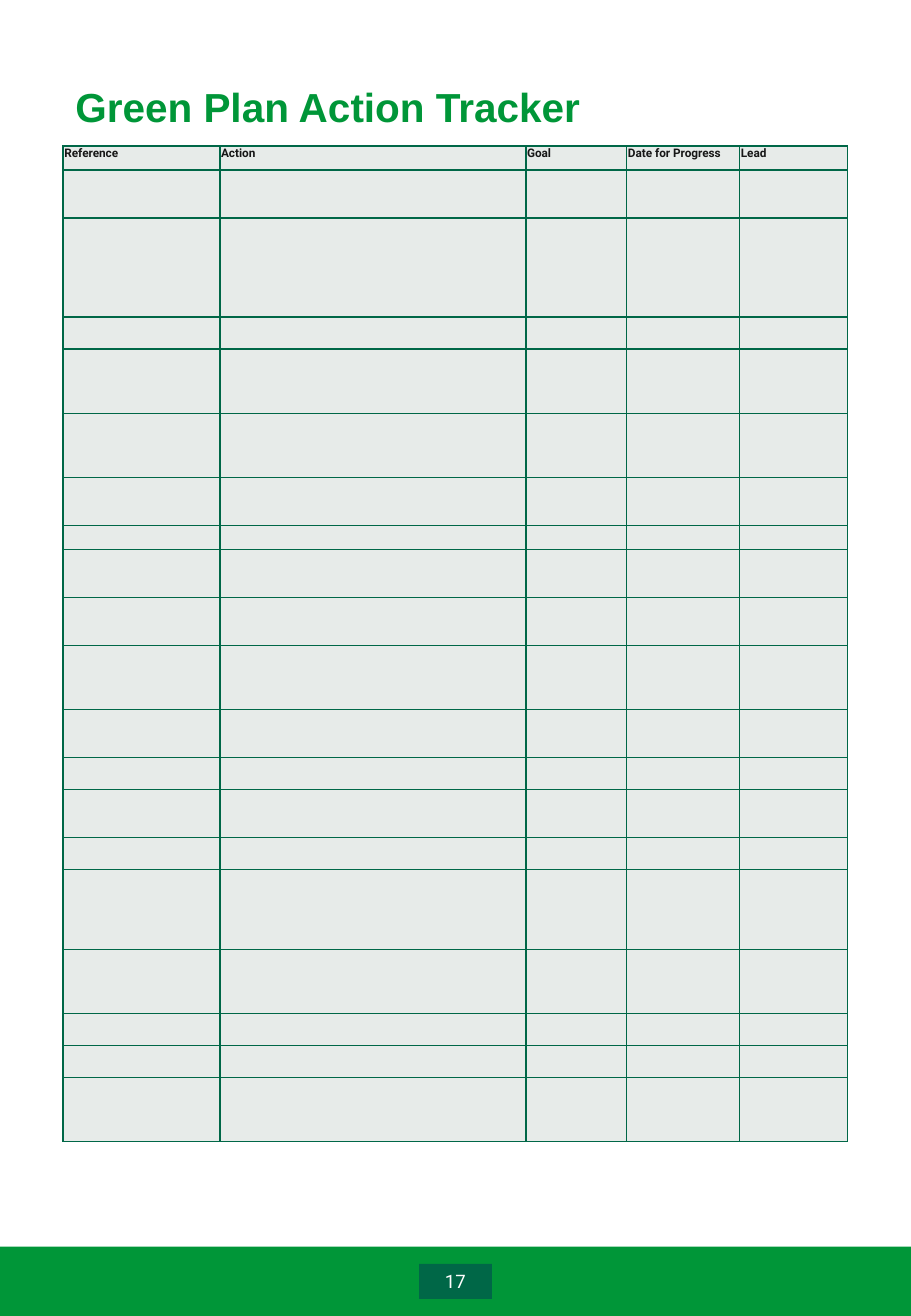
from lxml import etree
from pptx import Presentation, util as u
from pptx.dml.color import RGBColor
from pptx.enum import shapes, text
from pptx.oxml.ns import qn

COLOURS = {"green": "009638", "dark": "006747", "ink": "171717",
           "cell": "E7EBE9", "white": "FFFFFF"}
PAGE_WIDTH, PAGE_HEIGHT = 7.5, 10.83
HEADINGS = ["Reference", "Action", "Goal", "Date for Progress", "Lead"]
COLUMN_WIDTHS = [1.29, 2.52, 0.83, 0.93, 0.89]
# Row heights, counted in text lines
ROW_LINES = [1.5, 3, 6.2, 2, 4, 4, 3, 1.5, 3, 3,
             4, 3, 2, 3, 2, 5, 4, 2, 2, 4]


def colour(name):
    return RGBColor.from_string(COLOURS[name])


def inches(*lengths):
    return [u.Inches(length) for length in lengths]


def add_run(paragraph, words, size, font_name, ink, bold=False):
    run = paragraph.add_run()
    run.text = words
    font = run.font
    font.size, font.name, font.bold = u.Pt(size), font_name, bold
    font.color.rgb = colour(ink)


def add_block(slide, box, fill):
    block = slide.shapes.add_shape(shapes.MSO_SHAPE.RECTANGLE, *inches(*box))
    block.shadow.inherit = False
    block.fill.solid()
    block.fill.fore_color.rgb = colour(fill)
    block.line.fill.background()
    return block


def add_footer(slide, box):
    left, top, width, height = box
    add_block(slide, box, "green")
    # Page number, centred across the band
    number_width, number_height = 0.6, 0.29
    badge = add_block(slide, (left + (width - number_width) / 2,
                              top + (height - number_height) / 2,
                              number_width, number_height), "dark")
    frame = badge.text_frame
    frame.vertical_anchor = text.MSO_ANCHOR.MIDDLE
    number = frame.paragraphs[0]
    number.alignment = text.PP_ALIGN.CENTER
    add_run(number, "17", 11, "Roboto", "white")


def add_title(slide, box):
    title = slide.shapes.title
    title.left, title.top, title.width, title.height = inches(*box)
    frame = title.text_frame
    frame.word_wrap = True
    frame.auto_size = text.MSO_AUTO_SIZE.NONE
    frame.vertical_anchor = text.MSO_ANCHOR.MIDDLE
    heading = frame.paragraphs[0]
    heading.alignment = text.PP_ALIGN.LEFT
    heading.line_spacing = 0.9
    add_run(heading, "Green Plan Action Tracker", 24, "Arial", "green", True)


def format_cell(cell):
    cell.margin_left = cell.margin_right = cell.margin_top = u.Inches(0.01)
    cell.margin_bottom = 0
    cell.vertical_anchor = text.MSO_ANCHOR.TOP
    # Borders come before the fill in the cell properties
    properties = cell._tc.get_or_add_tcPr()
    for side in ("a:lnL", "a:lnR", "a:lnT", "a:lnB"):
        border = etree.SubElement(properties, qn(side), w=str(u.Pt(1)))
        solid = etree.SubElement(border, qn("a:solidFill"))
        etree.SubElement(solid, qn("a:srgbClr"), val=COLOURS["dark"])
    cell.fill.solid()
    cell.fill.fore_color.rgb = colour("cell")


def add_tracker(slide, box):
    tracker = slide.shapes.add_table(
        len(ROW_LINES), len(HEADINGS), *inches(*box)).table
    tracker.first_row = tracker.horz_banding = False
    for column, width in zip(tracker.columns, COLUMN_WIDTHS):
        column.width = u.Inches(width)
    line_height = box[3] / sum(ROW_LINES)
    for row, lines in zip(tracker.rows, ROW_LINES):
        row.height = u.Inches(lines * line_height)
    for cell in tracker.iter_cells():
        format_cell(cell)
        # Small type keeps empty rows at their set height
        etree.SubElement(cell.text_frame.paragraphs[0]._p,
                         qn("a:endParaRPr"), sz="700")
    for cell, heading in zip(tracker.rows[0].cells, HEADINGS):
        add_run(cell.text_frame.paragraphs[0], heading, 7, "Roboto", "ink", True)


def main():
    deck = Presentation()
    deck.slide_width, deck.slide_height = inches(PAGE_WIDTH, PAGE_HEIGHT)
    slide = deck.slides.add_slide(deck.slide_layouts[5])
    slide.background.fill.solid()
    slide.background.fill.fore_color.rgb = colour("white")
    add_footer(slide, (0, 10.26, PAGE_WIDTH, 0.57))
    add_title(slide, (0.52, 0.58, 6.47, 0.64))
    add_tracker(slide, (0.52, 1.2, 6.47, 8.2))
    deck.save("out.pptx")


if __name__ == "__main__":
    main()
